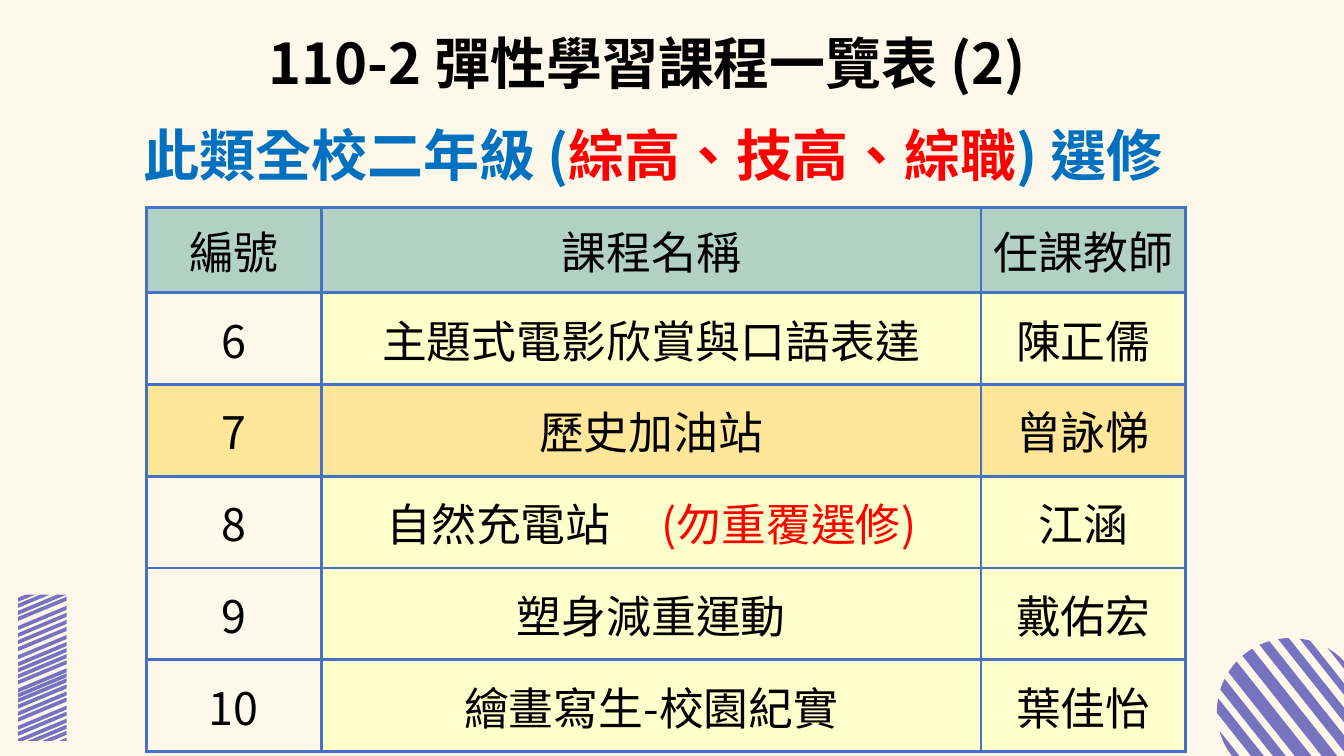
import math

from lxml import etree
from pptx import Presentation
from pptx.dml.color import RGBColor
from pptx.enum.text import MSO_ANCHOR, PP_ALIGN
from pptx.oxml.ns import qn
from pptx.util import Inches, Pt

CENTER = PP_ALIGN.CENTER
MIDDLE = MSO_ANCHOR.MIDDLE
FONT = "Noto Sans CJK SC"
BLACK, RED, BLUE = "000000", "FF0000", "0070C0"
CREAM, PURPLE, BORDER = "FEF8EA", "7773C0", "4472C4"
GREEN, YELLOW, ORANGE = "B3D0C5", "FFFFCC", "FFE699"

COLUMN_WIDTHS = [1.74, 6.54, 2.03]
HEADER = ["編號", "課程名稱", "任課教師"]
COURSES = [
    ("6", "主題式電影欣賞與口語表達", "陳正儒"),
    ("7", "歷史加油站", "曾詠悌"),
    ("8", "自然充電站", "江涵"),
    ("9", "塑身減重運動", "戴佑宏"),
    ("10", "繪畫寫生-校園紀實", "葉佳怡"),
]
HIGHLIGHTED = "7"
NOTES = {"8": "(勿重覆選修)"}

DISC_BANDS = [
    (-0.73, -0.67), (-0.58, -0.48), (-0.41, -0.31), (-0.24, -0.11), (-0.03, 0.09),
    (0.17, 0.27), (0.35, 0.44), (0.52, 0.59), (0.68, 0.73),
]
BAR_BAND_TOPS = [
    5.73, 5.79, 5.86, 5.92, 6.01, 6.08, 6.15, 6.22, 6.3, 6.37, 6.43, 6.49, 6.55,
    6.63, 6.68, 6.73, 6.79, 6.86, 6.92, 7, 7.06, 7.13, 7.19, 7.25, 7.32,
]


def color(value):
    return RGBColor.from_string(value)


def add_run(paragraph, text, size, ink, bold=False, spacing=0):
    run = paragraph.add_run()
    run.text = text
    run.font.size = Pt(size)
    run.font.bold = bold
    run.font.color.rgb = color(ink)
    run.font.name = FONT
    properties = run.font._element
    properties.set("lang", "zh-TW")
    if spacing:
        properties.set("spc", str(spacing * 100))
    etree.SubElement(properties, qn("a:ea")).set("typeface", FONT)


def add_heading(slide, left, top, width, height, line_spacing, runs, right_inset=0.1):
    heading = slide.shapes.add_textbox(Inches(left), Inches(top), Inches(width), Inches(height))
    frame = heading.text_frame
    frame.word_wrap = True
    frame.margin_left = frame.margin_top = frame.margin_bottom = Inches(0.1)
    frame.margin_right = Inches(right_inset)
    paragraph = frame.paragraphs[0]
    paragraph.alignment = CENTER
    paragraph.line_spacing = line_spacing
    for text, ink in runs:
        add_run(paragraph, text, 40, ink, bold=True)


def add_stripes(slide, outlines):
    outlines = [[(Inches(x), Inches(y)) for x, y in outline] for outline in outlines]
    builder = slide.shapes.build_freeform(*outlines[0][0])
    for index, (start, *rest) in enumerate(outlines):
        if index:
            builder.move_to(*start)
        builder.add_line_segments(rest, close=True)
    stripes = builder.convert_to_shape()
    stripes.shadow.inherit = False
    stripes.fill.solid()
    stripes.fill.fore_color.rgb = color(PURPLE)
    stripes.line.fill.background()


def disc_outlines(center_x, center_y, radius, degrees, steps=6):
    cos, sin = math.cos(math.radians(degrees)), math.sin(math.radians(degrees))

    def rim(offset, side):
        along = side * math.sqrt(radius ** 2 - offset ** 2)
        return (center_x + offset * sin + along * cos, center_y - offset * cos + along * sin)

    for low, high in DISC_BANDS:
        offsets = [low + (high - low) * step / steps for step in range(steps + 1)]
        yield [rim(s, 1) for s in offsets] + [rim(s, -1) for s in reversed(offsets)]


def clip(outline, limit, sign):
    kept = []
    for (x0, y0), (x1, y1) in zip(outline, outline[1:] + outline[:1]):
        inside, next_inside = sign * (y0 - limit) >= 0, sign * (y1 - limit) >= 0
        if inside:
            kept.append((x0, y0))
        if inside != next_inside:
            kept.append((x0 + (x1 - x0) * (limit - y0) / (y1 - y0), limit))
    return kept


def bar_outlines(left, right, top, bottom, drop=0.2, thickness=0.04):
    for start in BAR_BAND_TOPS:
        band = [(right, start), (right, start + thickness),
                (left, start + thickness + drop), (left, start + drop)]
        yield clip(clip(band, top, 1), bottom, -1)


def add_borders(cell):
    properties = cell._tc.get_or_add_tcPr()
    for index, side in enumerate(("lnL", "lnR", "lnT", "lnB")):
        line = etree.Element(qn("a:" + side), w=str(Pt(2.25)))
        fill = etree.SubElement(line, qn("a:solidFill"))
        etree.SubElement(fill, qn("a:srgbClr")).set("val", BORDER)
        properties.insert(index, line)


def fill_cell(cell, text, background, inset, note=None):
    cell.vertical_anchor = MIDDLE
    cell.margin_left = cell.margin_right = cell.margin_top = cell.margin_bottom = Inches(inset)
    if background:
        cell.fill.solid()
        cell.fill.fore_color.rgb = color(background)
    else:
        cell.fill.background()
    add_borders(cell)
    paragraph = cell.text_frame.paragraphs[0]
    paragraph.alignment = CENTER
    add_run(paragraph, text, 32, BLACK)
    if note:
        add_run(paragraph, " ", 32, BLACK, spacing=29)
        add_run(paragraph, note, 32, RED)


def add_course_table(slide):
    table = slide.shapes.add_table(
        len(COURSES) + 1, len(HEADER), Inches(1.45), Inches(2.06), Inches(10.31), Inches(5.25)
    ).table
    table.first_row = table.horz_banding = False
    for column, width in zip(table.columns, COLUMN_WIDTHS):
        column.width = Inches(width)
    for index, row in enumerate(table.rows):
        row.height = Inches(0.91 if index else 0.7)
    for column, title in enumerate(HEADER):
        fill_cell(table.cell(0, column), title, GREEN, 0.1)
    for row, course in enumerate(COURSES, 1):
        number = course[0]
        backgrounds = [ORANGE] * 3 if number == HIGHLIGHTED else [None, YELLOW, YELLOW]
        for column, (text, background) in enumerate(zip(course, backgrounds)):
            note = NOTES.get(number) if column == 1 else None
            fill_cell(table.cell(row, column), text, background, 0.01, note)


def main():
    deck = Presentation()
    deck.slide_width, deck.slide_height = Inches(13.33), Inches(7.5)
    slide = deck.slides.add_slide(deck.slide_layouts[6])
    slide.background.fill.solid()
    slide.background.fill.fore_color.rgb = color(CREAM)
    add_stripes(slide, list(disc_outlines(12.8, 7.06, 0.73, 51.6)))
    add_stripes(slide, list(bar_outlines(0.18, 0.66, 5.9, 7.35)))
    add_course_table(slide)
    add_heading(slide, 0.79, 1, 11.62, 1.06, 1.15, [
        ("此類全校二年級 (", BLUE), ("綜高、技高、綜職", RED), (") 選修", BLUE),
    ], right_inset=0.35)
    add_heading(slide, 1.76, 0.26, 9.32, 0.91, 0.9, [("110-2 彈性學習課程一覽表 (2)", BLACK)])
    deck.save("out.pptx")


if __name__ == "__main__":
    main()
